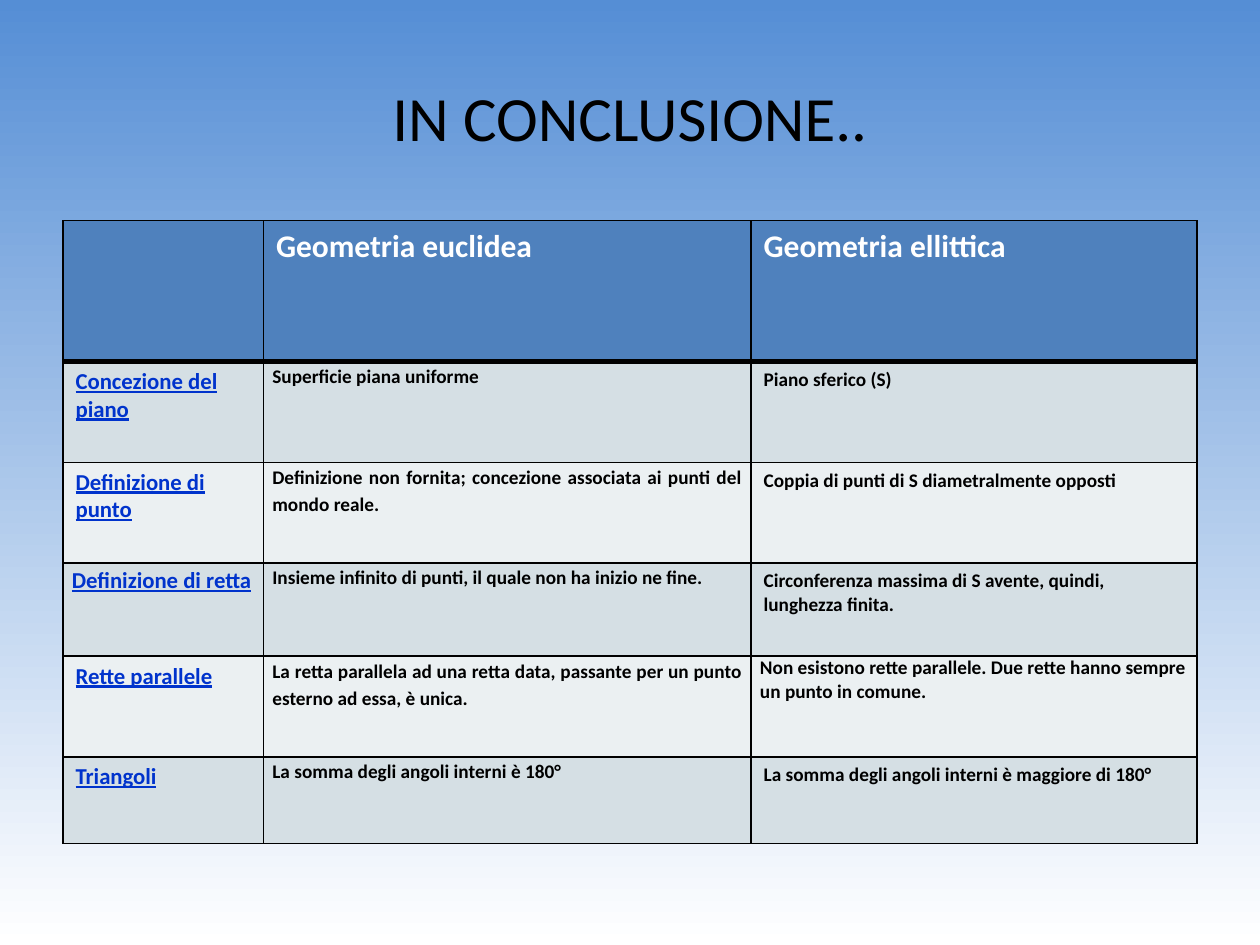
import pptx
import pptx.dml.color
import pptx.enum.text
import pptx.oxml
import pptx.oxml.ns
import pptx.util

Cm, Pt = pptx.util.Cm, pptx.util.Pt
ALIGN = pptx.enum.text.PP_ALIGN
ANCHOR = pptx.enum.text.MSO_ANCHOR

# Content
TITLE = "IN CONCLUSIONE.."
ROWS = [
    ("", "Geometria euclidea", "Geometria ellittica"),
    ("Concezione del piano", "Superficie piana uniforme", "Piano sferico (S)"),
    ("Definizione di punto",
     "Definizione non fornita; concezione associata ai punti del mondo reale.",
     "Coppia di punti di S diametralmente opposti"),
    ("Definizione di retta",
     "Insieme infinito di punti, il quale non ha inizio ne fine.",
     "Circonferenza massima di S avente, quindi, lunghezza finita."),
    ("Rette parallele",
     "La retta parallela ad una retta data, passante per un punto esterno ad essa, è unica.",
     "Non esistono rette parallele. Due rette hanno sempre un punto in comune."),
    ("Triangoli", "La somma degli angoli interni è 180°",
     "La somma degli angoli interni è maggiore di 180°"),
]
WIDTHS = [4.04, 9.83, 8.99]
HEIGHTS = [2.84, 2.03, 2.03, 1.88, 2.03, 1.75]
HEAD, BANDS = "4F81BD", ["EBF0F2", "D5DFE4"]

# Cells with narrow margins, and those also justified
JUST = {(r, 1) for r in range(1, len(ROWS))} | {(3, 0)}
TIGHT = JUST | {(4, 2)}


def color(text):
    return pptx.dml.color.RGBColor.from_string(text)


def write(para, text, size, tint, bold=False, under=False):
    run = para.add_run()
    run.text = text
    font = run.font
    font.name, font.size, font.bold, font.underline = "Calibri", Pt(size), bold, under
    font.color.rgb = color(tint)


def border(cell, side, width):
    line = pptx.oxml.parse_xml(
        f'<a:ln{side} {pptx.oxml.ns.nsdecls("a")} w="{Pt(width)}"><a:solidFill>'
        f'<a:srgbClr val="000000"/></a:solidFill></a:ln{side}>')
    cell._tc.get_or_add_tcPr().append(line)


deck = pptx.Presentation()
deck.slide_width, deck.slide_height = Cm(25.4), Cm(19.05)
slide = deck.slides.add_slide(deck.slide_layouts[6])

# Background, dark at the top
fill = slide.background.fill
fill.gradient()
fill.gradient_angle = 270
for stop, place, tint in zip(fill.gradient_stops, (0, 1), ("558ED5", "FFFFFF")):
    stop.position = place
    stop.color.rgb = color(tint)

# Title
frame = slide.shapes.add_textbox(Cm(1.27), Cm(0.76), Cm(22.86), Cm(3.18)).text_frame
frame.word_wrap = True
frame.vertical_anchor = ANCHOR.MIDDLE
frame.paragraphs[0].alignment = ALIGN.CENTER
write(frame.paragraphs[0], TITLE, 36, "000000")

# Table
table = slide.shapes.add_table(
    len(ROWS), len(WIDTHS), Cm(1.27), Cm(4.45),
    Cm(sum(WIDTHS)), Cm(sum(HEIGHTS))).table
for col, width in zip(table.columns, WIDTHS):
    col.width = Cm(width)
for row, height in zip(table.rows, HEIGHTS):
    row.height = Cm(height)

for r, texts in enumerate(ROWS):
    for c, text in enumerate(texts):
        cell = table.cell(r, c)
        for side in "LRTB":
            thick = (r, side) in {(0, "B"), (1, "T")}
            border(cell, side, 3 if thick else 1)
        cell.fill.solid()
        cell.fill.fore_color.rgb = color(BANDS[r % 2] if r else HEAD)
        para = cell.text_frame.paragraphs[0]
        if (r, c) in TIGHT:
            cell.margin_left = cell.margin_right = Cm(0.18)
            cell.margin_top = cell.margin_bottom = 0
        if (r, c) in JUST:
            para.alignment = ALIGN.JUSTIFY
            para.line_spacing = 1.15
        if not text:
            continue
        if r == 0:
            write(para, text, 18, "FFFFFF", bold=True)
        elif c == 0:
            write(para, text, 13, "0033CC", bold=True, under=True)
        else:
            write(para, text, 11, "000000", bold=True)

deck.save("out.pptx")
